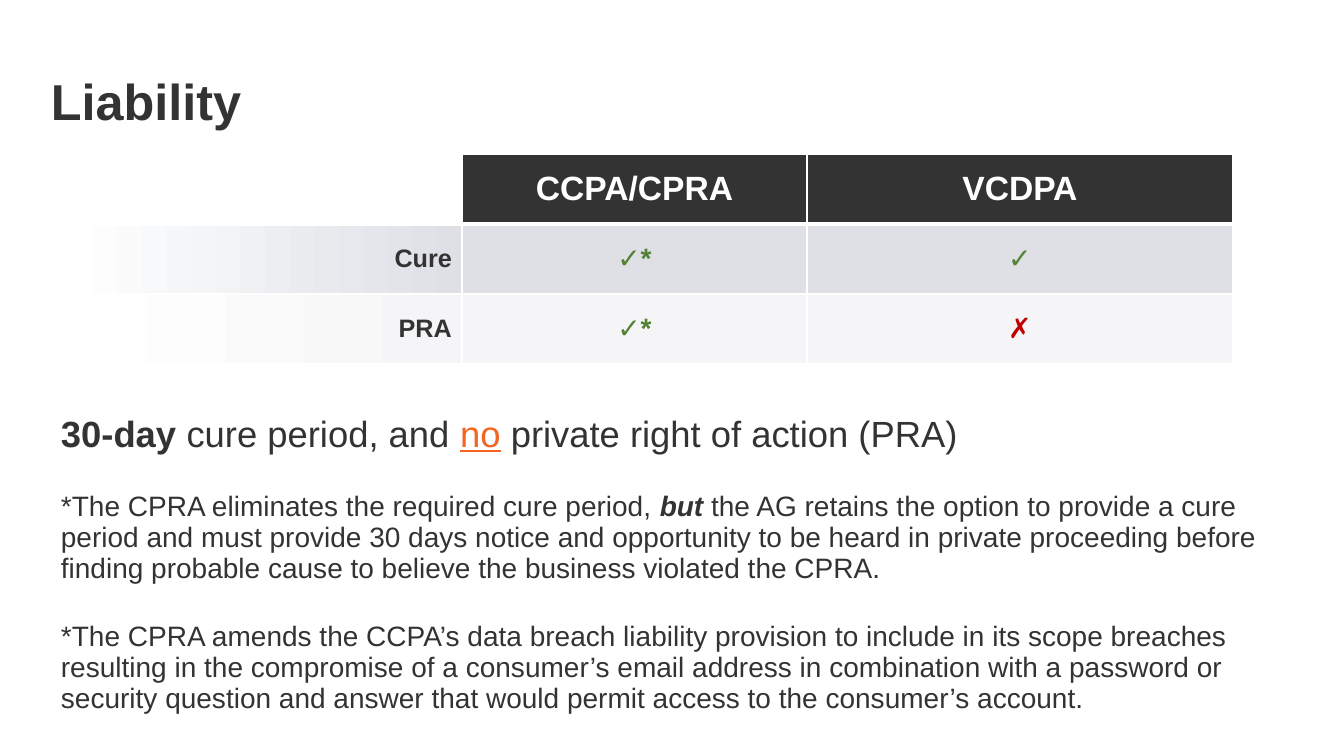
from lxml import etree
from pptx import Presentation
from pptx import util as u
from pptx.dml.color import RGBColor
from pptx.enum import text
from pptx.oxml.ns import qn

PX = 914400 / 100.8
THEME = dict(
    font="Arial", ink="333333", white="FFFFFF", accent="F26522",
    yes="548235", no="C00000", bands=["DEE0E6", "F5F5F7"],
    title=36, head=24, lead=26, mark=20, label=18, note=20,
)
LEFT, CENTER, RIGHT = text.PP_ALIGN.LEFT, text.PP_ALIGN.CENTER, text.PP_ALIGN.RIGHT


def px(n):
    return u.Emu(round(n * PX))


def add_run(p, words, size, color=THEME["ink"], bold=False, italic=False, underline=False):
    r = p.add_run()
    r.text = words
    f = r.font
    f.name, f.size, f.color.rgb = THEME["font"], u.Pt(size), RGBColor.from_string(color)
    f.bold, f.italic, f.underline = bold, italic, underline


prs = Presentation()
prs.slide_width, prs.slide_height = px(1344), px(756)
s = prs.slides.add_slide(prs.slide_layouts[6])

# Title
tf = s.shapes.add_textbox(px(41), px(41), px(1092), px(126)).text_frame
tf.word_wrap = True
tf.vertical_anchor = text.MSO_ANCHOR.MIDDLE
p = tf.paragraphs[0]
p.line_spacing = 0.9
add_run(p, "Liability", THEME["title"], bold=True)

# Comparison table
rows = [
    ["", "CCPA/CPRA", "VCDPA"],
    ["Cure", "✓*", "✓"],
    ["PRA", "✓*", "✗"],
]
widths = [394, 345, 426]
row_height = 70
tbl = s.shapes.add_table(len(rows), len(widths), px(68), px(154),
                         px(sum(widths)), px(row_height * len(rows))).table
tbl.first_row = tbl.horz_banding = False
for col, width in zip(tbl.columns, widths):
    col.width = px(width)

for i, row in enumerate(rows):
    tbl.rows[i].height = px(row_height)
    for j, words in enumerate(row):
        cell = tbl.cell(i, j)
        cell.vertical_anchor = text.MSO_ANCHOR.MIDDLE

        # Fill: dark header, faded row labels, banded body
        if i == 0 and j == 0:
            cell.fill.background()
        elif j == 0:
            cell.fill.gradient()
            cell.fill.gradient_angle = 0
            for stop, color in zip(cell.fill.gradient_stops, [THEME["white"], THEME["bands"][i - 1]]):
                stop.color.rgb = RGBColor.from_string(color)
        else:
            cell.fill.solid()
            color = THEME["ink"] if i == 0 else THEME["bands"][i - 1]
            cell.fill.fore_color.rgb = RGBColor.from_string(color)

        # White borders, thicker around the header's lower edge
        tcPr = cell._tc.get_or_add_tcPr()
        for k, side in enumerate(["lnL", "lnR", "lnT", "lnB"]):
            thick = (i == 0 and side == "lnB") or (i == 1 and side == "lnT")
            ln = etree.Element(qn("a:" + side), w=str(u.Pt(3 if thick else 1)))
            fill = etree.SubElement(ln, qn("a:solidFill"))
            etree.SubElement(fill, qn("a:srgbClr"), val=THEME["white"])
            tcPr.insert(k, ln)

        # Cell text
        if words:
            if i == 0:
                size, color = THEME["head"], THEME["white"]
            elif j == 0:
                size, color = THEME["label"], THEME["ink"]
            else:
                size, color = THEME["mark"], THEME["no" if words == "✗" else "yes"]
            p = cell.text_frame.paragraphs[0]
            p.alignment = RIGHT if j == 0 else CENTER
            add_run(p, words, size, color, bold=True)

# Body text: lead sentence and two notes
tf = s.shapes.add_textbox(px(51), px(411), px(1241), px(319)).text_frame
tf.word_wrap = True
tf.margin_top = tf.margin_bottom = 0
p = tf.paragraphs[0]
p.alignment = LEFT
add_run(p, "30-day", THEME["lead"], bold=True)
add_run(p, " cure period, and ", THEME["lead"])
add_run(p, "no", THEME["lead"], THEME["accent"], underline=True)
add_run(p, " private right of action (PRA)", THEME["lead"])

notes = [
    [("*The CPRA eliminates the required cure period, ", False),
     ("but", True),
     (" the AG retains the option to provide a cure period and must provide 30 days notice "
      "and opportunity to be heard in private proceeding before finding probable cause "
      "to believe the business violated the CPRA.", False)],
    [("*The CPRA amends the CCPA’s data breach liability provision to include in its scope "
      "breaches resulting in the compromise of a consumer’s email address in combination "
      "with a password or security question and answer that would permit access to the "
      "consumer’s account.", False)],
]
for note in notes:
    p = tf.add_paragraph()
    p.line_spacing = 0.93
    p.space_before = u.Pt(26)
    for words, strong in note:
        add_run(p, words, THEME["note"], bold=strong, italic=strong)

prs.save("out.pptx")
